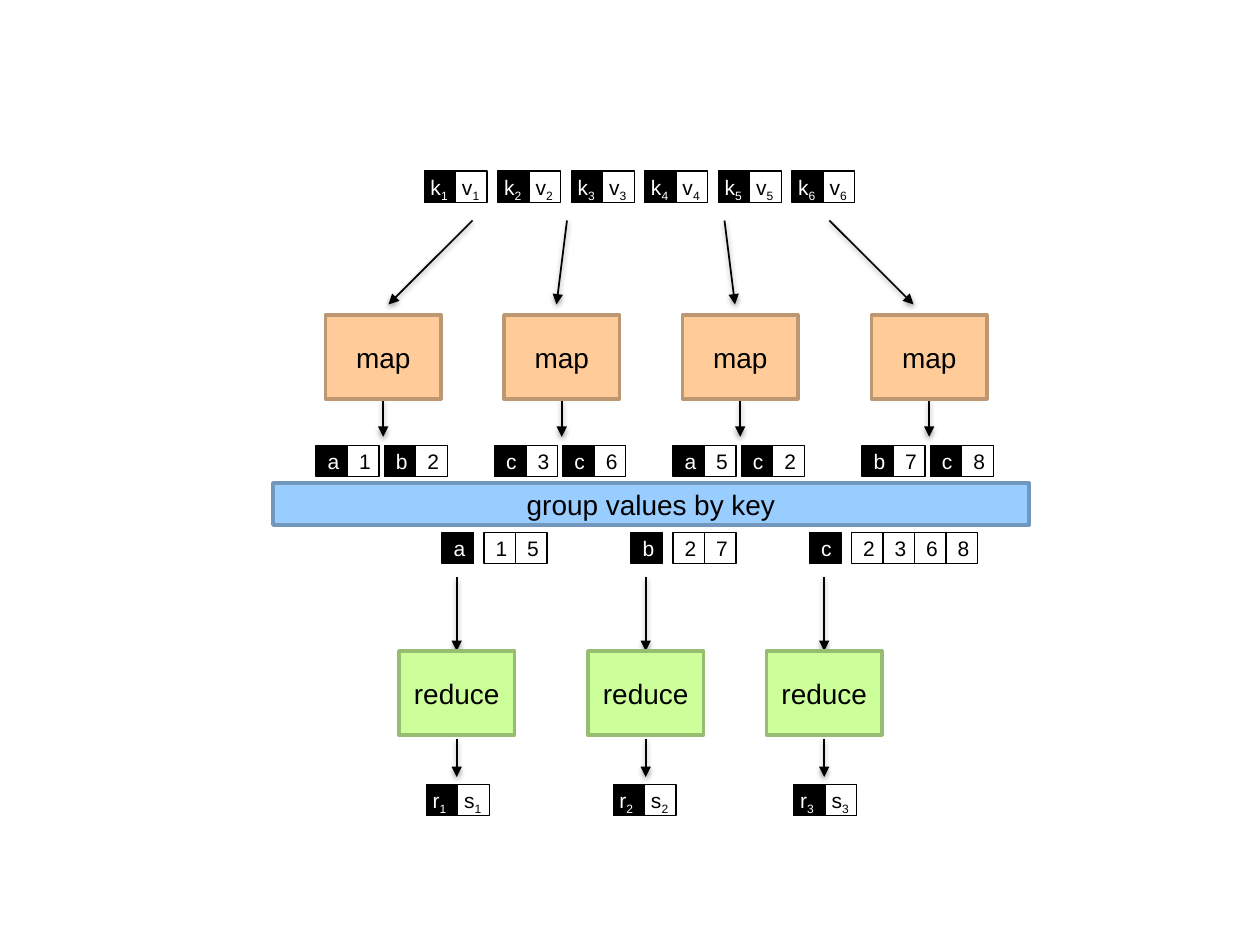
from lxml.etree import fromstring
from pptx import Presentation
from pptx.dml.color import RGBColor
from pptx.enum.shapes import MSO_CONNECTOR, MSO_SHAPE
from pptx.enum.text import MSO_ANCHOR, PP_ALIGN
from pptx.util import Pt

PX = 7620  # EMU per px, 120 px to the inch
COLORS = {
    "black": "000000", "white": "FFFFFF",
    "map": "FFCC99", "map_line": "BD9771",
    "group": "99CCFF", "group_line": "7197BD",
    "reduce": "CCFF99", "reduce_line": "97BD71",
}
NS = 'xmlns:a="http://schemas.openxmlformats.org/drawingml/2006/main"'
SHADOW = (f'<a:effectLst {NS}><a:outerShdw blurRad="40000" dist="20000" dir="5400000" '
          'rotWithShape="0"><a:srgbClr val="000000"><a:alpha val="38000"/></a:srgbClr>'
          '</a:outerShdw></a:effectLst>')
ARROWHEAD = f'<a:tailEnd {NS} type="triangle"/>'
CELL = 30
BOX_W, BOX_H = 110, 80

prs = Presentation()
prs.slide_width, prs.slide_height = 1200 * PX, 900 * PX
s = prs.slides.add_slide(prs.slide_layouts[6])


def add_box(x, y, w, h, text, fill, line, color="black", is_cell=False):
    """Draw a labelled box; in a cell, characters after the first are subscript."""
    sp = s.shapes.add_shape(MSO_SHAPE.RECTANGLE, x * PX, y * PX, w * PX, h * PX)
    sp.shadow.inherit = False
    if fill:
        sp.fill.solid()
        sp.fill.fore_color.rgb = RGBColor.from_string(COLORS[fill])
    else:
        sp.fill.background()
    sp.line.color.rgb = RGBColor.from_string(COLORS[line])
    sp.line.width = Pt(0.75 if is_cell else 2)

    tf = sp.text_frame
    tf.margin_left = tf.margin_right = tf.margin_top = tf.margin_bottom = 0
    tf.vertical_anchor = MSO_ANCHOR.MIDDLE
    p = tf.paragraphs[0]
    p.alignment = PP_ALIGN.CENTER
    p.font.name = "Arial"
    p.font.size = Pt(12 if is_cell else 16)
    p.font.color.rgb = RGBColor.from_string(COLORS[color])
    if is_cell:
        tf.vertical_anchor = MSO_ANCHOR.TOP
        tf.margin_top = 3 * PX
        tf.margin_left = (11 if len(text) == 1 else 6) * PX
        p.alignment = PP_ALIGN.LEFT
        p.add_run().text = text[0]
        if text[1:]:
            r = p.add_run()
            r.text = text[1:]
            r.font._element.set("baseline", "-25000")
    else:
        p.add_run().text = text


def add_arrow(x1, y1, x2, y2):
    c = s.shapes.add_connector(MSO_CONNECTOR.STRAIGHT, x1 * PX, y1 * PX, x2 * PX, y2 * PX)
    c.line.width = Pt(1)
    c.line.color.rgb = RGBColor.from_string(COLORS["black"])
    c.line._get_or_add_ln().append(fromstring(ARROWHEAD))
    c._element.spPr.append(fromstring(SHADOW))


cells = []  # (x, y, text, is_key)

# Input pairs
for i in range(6):
    x = 404 + 70 * i
    cells += [(x, 163, f"k{i + 1}", True), (x + CELL, 163, f"v{i + 1}", False)]

# Map stage: box left, input arrow start and end, output pairs
for x, start, end, pairs in [
    (310, 450, 370, ("a1", "b2")),
    (480, 540, 530, ("c3", "c6")),
    (650, 690, 700, ("a5", "c2")),
    (830, 790, 870, ("b7", "c8")),
]:
    add_arrow(start, 210, end, 290)
    add_arrow(x + BOX_W // 2, 380, x + BOX_W // 2, 416)
    add_box(x, 300, BOX_W, BOX_H, "map", "map", "map_line")
    for i, (key, value) in enumerate(pairs):
        left = x - 9 + 65 * i
        cells += [(left, 424, key, True), (left + CELL, 424, value, False)]

add_box(260, 460, 720, 40, "group values by key", "group", "group_line")

# Reduce stage: box left, key, grouped values, result left
for n, (x, key, values, result_x) in enumerate([
    (380, "a", "15", 406),
    (560, "b", "27", 584),
    (730, "c", "2368", 756),
], start=1):
    add_arrow(x + BOX_W // 2, 550, x + BOX_W // 2, 620)
    add_arrow(x + BOX_W // 2, 704, x + BOX_W // 2, 740)
    add_box(x, 620, BOX_W, BOX_H, "reduce", "reduce", "reduce_line")
    cells.append((x + 41, 507, key, True))
    for i, value in enumerate(values):
        cells.append((x + 81 + CELL * i, 507, value, False))
    cells += [(result_x, 747, f"r{n}", True), (result_x + CELL, 747, f"s{n}", False)]

for x, y, text, is_key in cells:
    add_box(x, y, CELL, CELL, text, "black" if is_key else None, "black",
            "white" if is_key else "black", is_cell=True)

prs.save("out.pptx")
